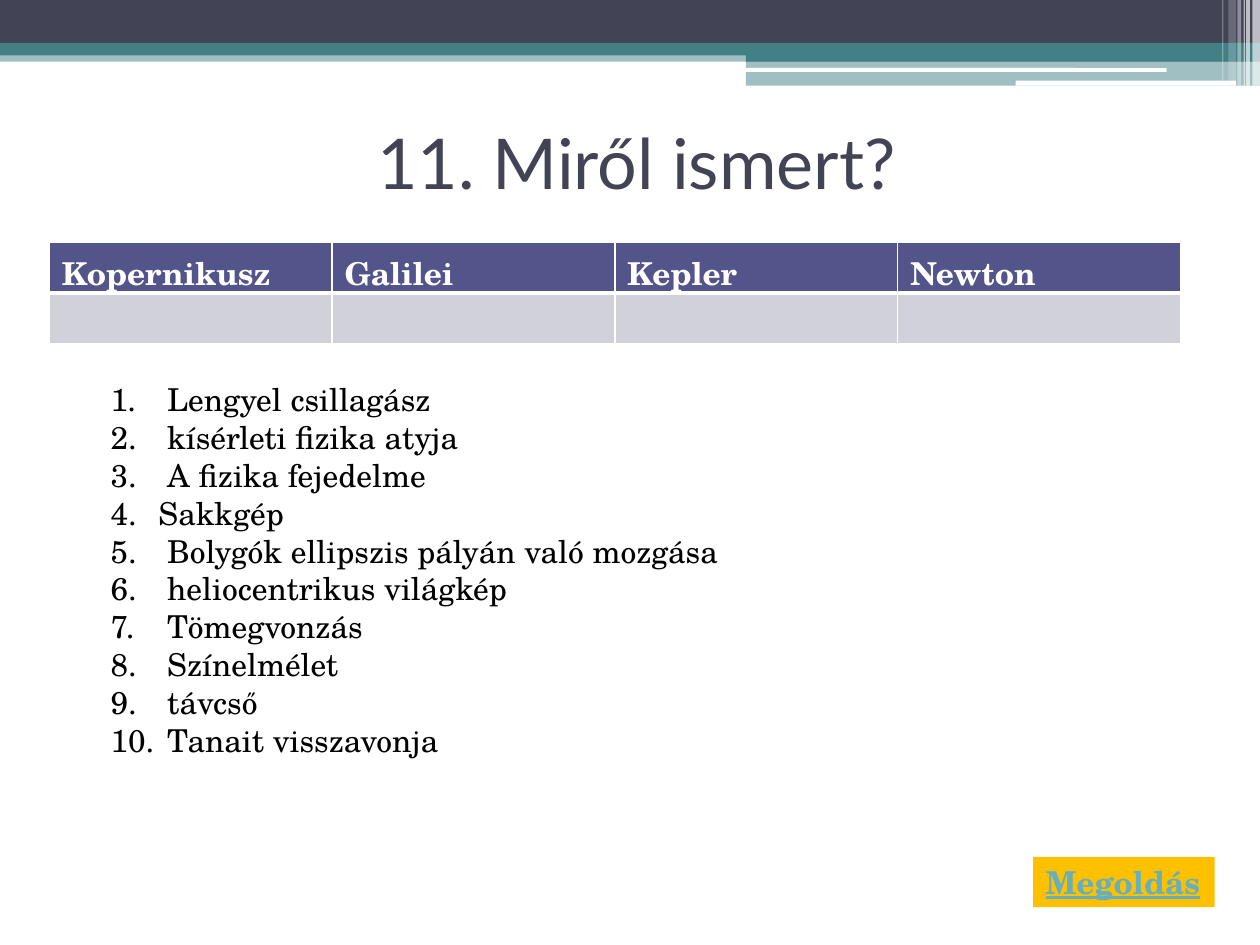
from dataclasses import dataclass

from lxml import etree
from pptx import Presentation
from pptx.dml.color import RGBColor
from pptx.enum.shapes import MSO_SHAPE
from pptx.enum.text import MSO_ANCHOR, MSO_AUTO_SIZE, PP_ALIGN
from pptx.oxml.ns import qn
from pptx.util import Inches, Pt


@dataclass(frozen=True)
class Theme:
    ink: str = "424456"
    teal: str = "438086"
    white: str = "FFFFFF"
    black: str = "000000"
    header: str = "53548A"
    answer: str = "D1D1DA"
    button: str = "FFC000"
    link: str = "67AFBD"
    title_font: str = "Lato"
    body_font: str = "TeX Gyre Schola"
    title_size: int = 40
    body_size: int = 18


THEME = Theme()

# left, top, width, height, colour, opacity in percent
BANDS = [
    (0, 0.4, 10, 0.09, THEME.teal, 50),
    (0, 0, 10, 0.34, THEME.ink, 100),
    (0, 0.34, 10, 0.1, THEME.teal, 100),
    (5.92, 0.39, 4.08, 0.1, THEME.teal, 100),
    (5.92, 0.48, 4.08, 0.2, THEME.teal, 50),
]
HIGHLIGHTS = [(5.91, 0.54, 3.35, 0.03), (8.06, 0.64, 1.75, 0.04)]
# left, width, height, opacity in percent
STRIPES = [
    (9.94, 0.06, 0.68, 65),
    (9.89, 0.03, 0.68, 65),
    (9.87, 0.01, 0.68, 60),
    (9.82, 0.03, 0.68, 40),
    (9.75, 0.06, 0.64, 20),
    (9.7, 0.01, 0.64, 30),
]
SCIENTISTS = ["Kopernikusz", "Galilei", "Kepler", "Newton"]
CLUES = [
    " Lengyel csillagász",
    " kísérleti fizika atyja",
    " A fizika fejedelme",
    "Sakkgép",
    " Bolygók ellipszis pályán való mozgása",
    " heliocentrikus világkép",
    " Tömegvonzás",
    " Színelmélet",
    " távcső",
    " Tanait visszavonja",
]


def style(paragraph, color, font=THEME.body_font, size=THEME.body_size, bold=False):
    paragraph.font.name = font
    paragraph.font.size = Pt(size)
    paragraph.font.bold = bold
    paragraph.font.color.rgb = RGBColor.from_string(color)


def add_block(slide, left, top, width, height, color, opacity=100, kind=MSO_SHAPE.RECTANGLE):
    block = slide.shapes.add_shape(
        kind, Inches(left), Inches(top), Inches(width), Inches(height))
    block.shadow.inherit = False
    block.line.fill.background()
    block.fill.solid()
    block.fill.fore_color.rgb = RGBColor.from_string(color)
    if opacity < 100:
        color_node = block.fill._xPr.find(qn("a:solidFill"))[0]
        etree.SubElement(color_node, qn("a:alpha"), val=str(opacity * 1000))
    return block


def add_header_art(slide):
    for band in BANDS:
        add_block(slide, *band)
    for highlight in HIGHLIGHTS:
        add_block(slide, *highlight, THEME.white, kind=MSO_SHAPE.ROUNDED_RECTANGLE)
    for left, width, height, opacity in STRIPES:
        add_block(slide, left, 0, width, height, THEME.white, opacity)


def add_title(slide, text):
    title = slide.shapes.add_textbox(Inches(0.55), Inches(0.7), Inches(9), Inches(1.17))
    frame = title.text_frame
    frame.word_wrap = True
    frame.vertical_anchor = MSO_ANCHOR.MIDDLE
    heading = frame.paragraphs[0]
    heading.text = text
    heading.alignment = PP_ALIGN.CENTER
    style(heading, THEME.ink, THEME.title_font, THEME.title_size)


def set_borders(cell, widths):
    """Draw white borders; widths maps a side (L, R, T, B) to points."""
    properties = cell._tc.get_or_add_tcPr()
    for index, (side, width) in enumerate(widths.items()):
        line = etree.Element(qn(f"a:ln{side}"), w=str(Pt(width)))
        fill = etree.SubElement(line, qn("a:solidFill"))
        etree.SubElement(fill, qn("a:srgbClr"), val=THEME.white)
        properties.insert(index, line)


def add_answer_table(slide):
    table = slide.shapes.add_table(
        2, len(SCIENTISTS), Inches(0.39), Inches(1.92), Inches(8.98), Inches(0.81)).table
    rows = [
        (SCIENTISTS, THEME.header, {"L": 1, "R": 1, "T": 1, "B": 3}),
        ([""] * len(SCIENTISTS), THEME.answer, {"L": 1, "R": 1, "T": 3, "B": 1}),
    ]
    for row, (texts, color, borders) in enumerate(rows):
        for column, text in enumerate(texts):
            cell = table.cell(row, column)
            cell.text = text
            style(cell.text_frame.paragraphs[0], THEME.white, bold=True)
            cell.fill.solid()
            cell.fill.fore_color.rgb = RGBColor.from_string(color)
            set_borders(cell, borders)


def add_clue_list(slide):
    clues = slide.shapes.add_textbox(Inches(0.78), Inches(2.97), Inches(7.34), Inches(3.13))
    frame = clues.text_frame
    frame.word_wrap = True
    frame.text = "\n".join(CLUES)
    for clue in frame.paragraphs:
        style(clue, THEME.black)
        properties = clue._p.get_or_add_pPr()
        properties.set("marL", str(Inches(0.38)))
        properties.set("indent", str(Inches(-0.38)))
        properties.insert(0, etree.Element(qn("a:buAutoNum"), type="arabicPeriod"))


def add_solution_button(slide, text):
    button = add_block(slide, 8.2, 6.8, 1.44, 0.4, THEME.button)
    frame = button.text_frame
    frame.word_wrap = False
    frame.auto_size = MSO_AUTO_SIZE.SHAPE_TO_FIT_TEXT
    frame.vertical_anchor = MSO_ANCHOR.TOP
    label = frame.paragraphs[0]
    label.text = text
    label.alignment = PP_ALIGN.LEFT
    style(label, THEME.link, bold=True)
    label.font.underline = True


def main():
    deck = Presentation()
    deck.slide_width, deck.slide_height = Inches(10), Inches(7.5)
    slide = deck.slides.add_slide(deck.slide_layouts[6])
    add_header_art(slide)
    add_title(slide, "11. Miről ismert?")
    add_solution_button(slide, "Megoldás")
    add_answer_table(slide)
    add_clue_list(slide)
    deck.save("out.pptx")


if __name__ == "__main__":
    main()
